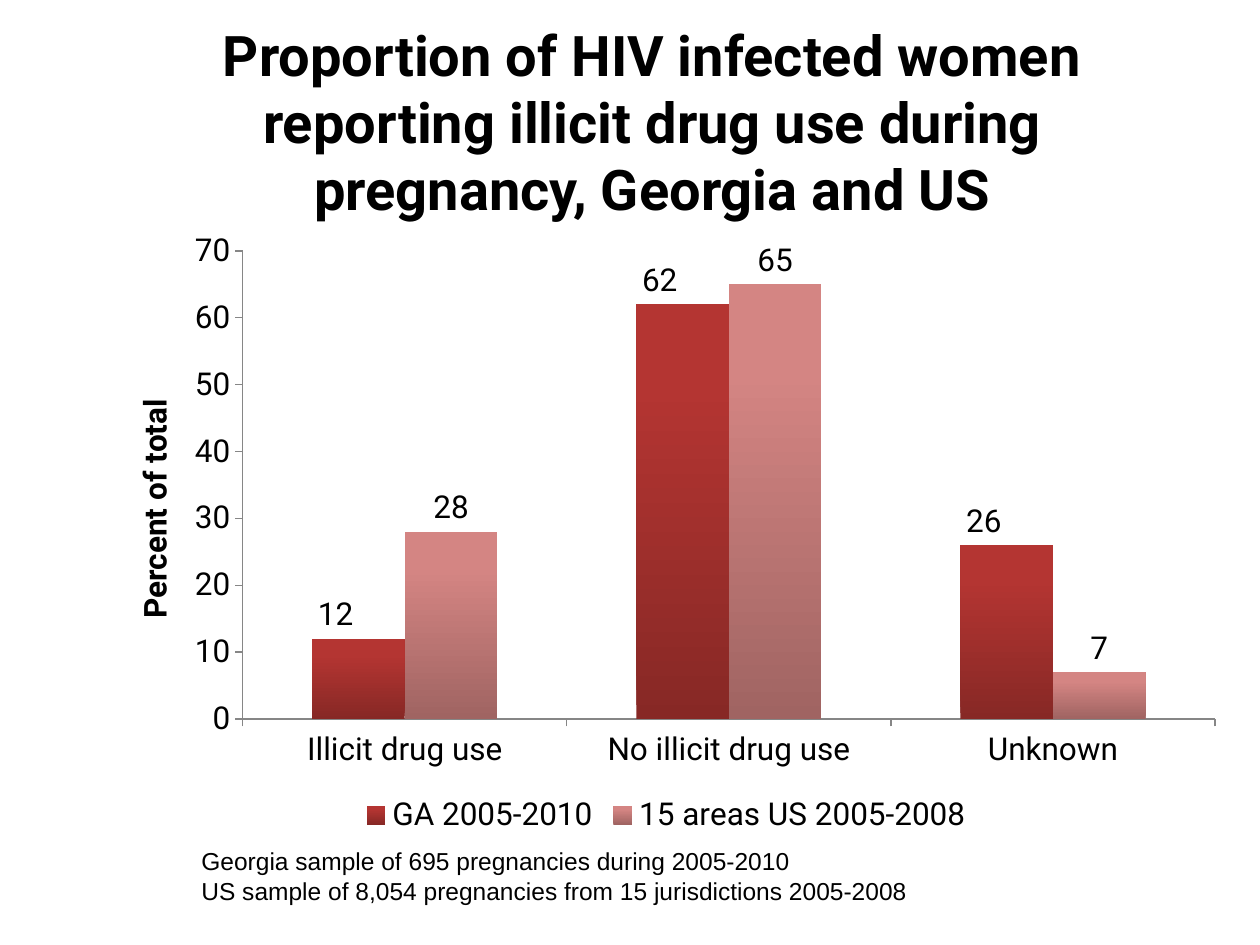
import pptx
import pptx.chart.data
import pptx.dml.color
import pptx.enum.chart
import pptx.enum.text
import pptx.oxml
import pptx.oxml.ns
import pptx.util

SCALE = 914400 / 126
FONT = "Roboto"
HUES = {"text": "000000", "axis": "868686"}
BARS = [
    ("GA 2005-2010", (12, 62, 26), "872825", "B43532"),
    ("15 areas US 2005-2008", (28, 65, 7), "A06462", "D48583"),
]
CATS = ("Illicit drug use", "No illicit drug use", "Unknown")
NOTES = (
    "Georgia sample of 695 pregnancies during 2005-2010\n"
    "US sample of 8,054 pregnancies from 15 jurisdictions 2005-2008"
)


def px(num):
    return pptx.util.Emu(round(num * SCALE))


def tint(hue):
    return pptx.dml.color.RGBColor.from_string(hue)


def style(font, size, name=FONT, bold=False):
    font.size = pptx.util.Pt(size)
    font.name = name
    font.bold = bold
    font.color.rgb = tint(HUES["text"])


def set_layout(prior, **parts):
    tag = pptx.oxml.ns.qn("c:layout")
    parent = prior.getparent()
    for old in parent.findall(tag):
        parent.remove(old)
    body = "".join(f'<c:{key} val="{val}"/>' for key, val in parts.items())
    space = pptx.oxml.ns.nsdecls("c")
    prior.addnext(pptx.oxml.parse_xml(
        f"<c:layout {space}><c:manualLayout>{body}</c:manualLayout></c:layout>"))


def add_title(slide, left, top, width, height):
    title = slide.shapes.title
    title.left, title.top = px(left), px(top)
    title.width, title.height = px(width), px(height)
    frame = title.text_frame
    frame.text = ("Proportion of HIV infected women reporting illicit drug use "
                  "during pregnancy, Georgia and US")
    frame.auto_size = pptx.enum.text.MSO_AUTO_SIZE.NONE
    frame.vertical_anchor = pptx.enum.text.MSO_ANCHOR.MIDDLE
    para = frame.paragraphs[0]
    para.alignment = pptx.enum.text.PP_ALIGN.CENTER
    style(para.runs[0].font, 32, bold=True)


def format_axes(chart):
    for axis in (chart.category_axis, chart.value_axis):
        axis.has_major_gridlines = False
        axis.major_tick_mark = pptx.enum.chart.XL_TICK_MARK.OUTSIDE
        axis.format.line.color.rgb = tint(HUES["axis"])
        style(axis.tick_labels.font, 18)
    scale = chart.value_axis
    scale.minimum_scale, scale.maximum_scale = 0, 70
    scale.major_unit = 10
    frame = scale.axis_title.text_frame
    frame.text = "Percent of total"
    style(frame.paragraphs[0].runs[0].font, 18, bold=True)


def format_bars(plot):
    plot.gap_width, plot.overlap = 150, 0
    plot.vary_by_categories = False
    for row, (name, nums, dark, light) in zip(plot.series, BARS):
        fill = row.format.fill
        fill.gradient()
        fill.gradient_angle = 90
        low, high = fill.gradient_stops
        low.color.rgb, low.position = tint(dark), 0
        high.color.rgb, high.position = tint(light), 0.8
        labels = row.data_labels
        labels.show_value = True
        labels.number_format = "0"
        labels.number_format_is_linked = False
        labels.position = pptx.enum.chart.XL_LABEL_POSITION.OUTSIDE_END
        style(labels.font, 18)


def shift_labels(chart, ratio):
    for spot in range(len(CATS)):
        label = chart.plots[0].series[0].points[spot].data_label
        style(label.font, 18)
        label.position = pptx.enum.chart.XL_LABEL_POSITION.OUTSIDE_END
    for index in chart.element.xpath(".//c:dLbl/c:idx"):
        set_layout(index, x=ratio, y=0)


def add_chart(slide, left, top, width, height):
    data = pptx.chart.data.CategoryChartData()
    data.categories = CATS
    for name, nums, dark, light in BARS:
        data.add_series(name, nums)
    chart = slide.shapes.add_chart(
        pptx.enum.chart.XL_CHART_TYPE.COLUMN_CLUSTERED,
        px(left), px(top), px(width), px(height), data).chart
    chart.has_title = False
    style(chart.font, 18)
    chart.has_legend = True
    chart.legend.position = pptx.enum.chart.XL_LEGEND_POSITION.BOTTOM
    chart.legend.include_in_layout = False
    style(chart.legend.font, 18)
    format_axes(chart)
    format_bars(chart.plots[0])
    shift_labels(chart, -0.02)
    head = chart.element.xpath(".//c:valAx/c:title/c:tx")[0]
    set_layout(head, xMode="edge", yMode="edge", x=0.03, y=0.28)
    area = chart.element.xpath(".//c:plotArea")[0]
    mark = pptx.oxml.parse_xml(f'<c:layout {pptx.oxml.ns.nsdecls("c")}/>')
    area.insert(0, mark)
    set_plot = dict(layoutTarget="inner", xMode="edge", yMode="edge",
                    x=0.13, y=0.05, w=0.85, h=0.755)
    first = area.xpath("c:barChart")[0]
    set_layout(first, **set_plot)
    area.insert(0, first.getnext())


def add_notes(slide, left, top, width, height):
    box = slide.shapes.add_textbox(px(left), px(top), px(width), px(height))
    frame = box.text_frame
    frame.word_wrap = True
    frame.text = NOTES
    for para in frame.paragraphs:
        style(para.runs[0].font, 14, "Arial")


def main():
    deck = pptx.Presentation()
    deck.slide_width, deck.slide_height = px(1260), px(945)
    slide = deck.slides.add_slide(deck.slide_layouts[5])
    add_title(slide, 112, 42, 1081, 158)
    add_chart(slide, 94, 220, 1144, 620)
    add_notes(slide, 189, 840, 1007, 72)
    deck.save("out.pptx")


if __name__ == "__main__":
    main()
